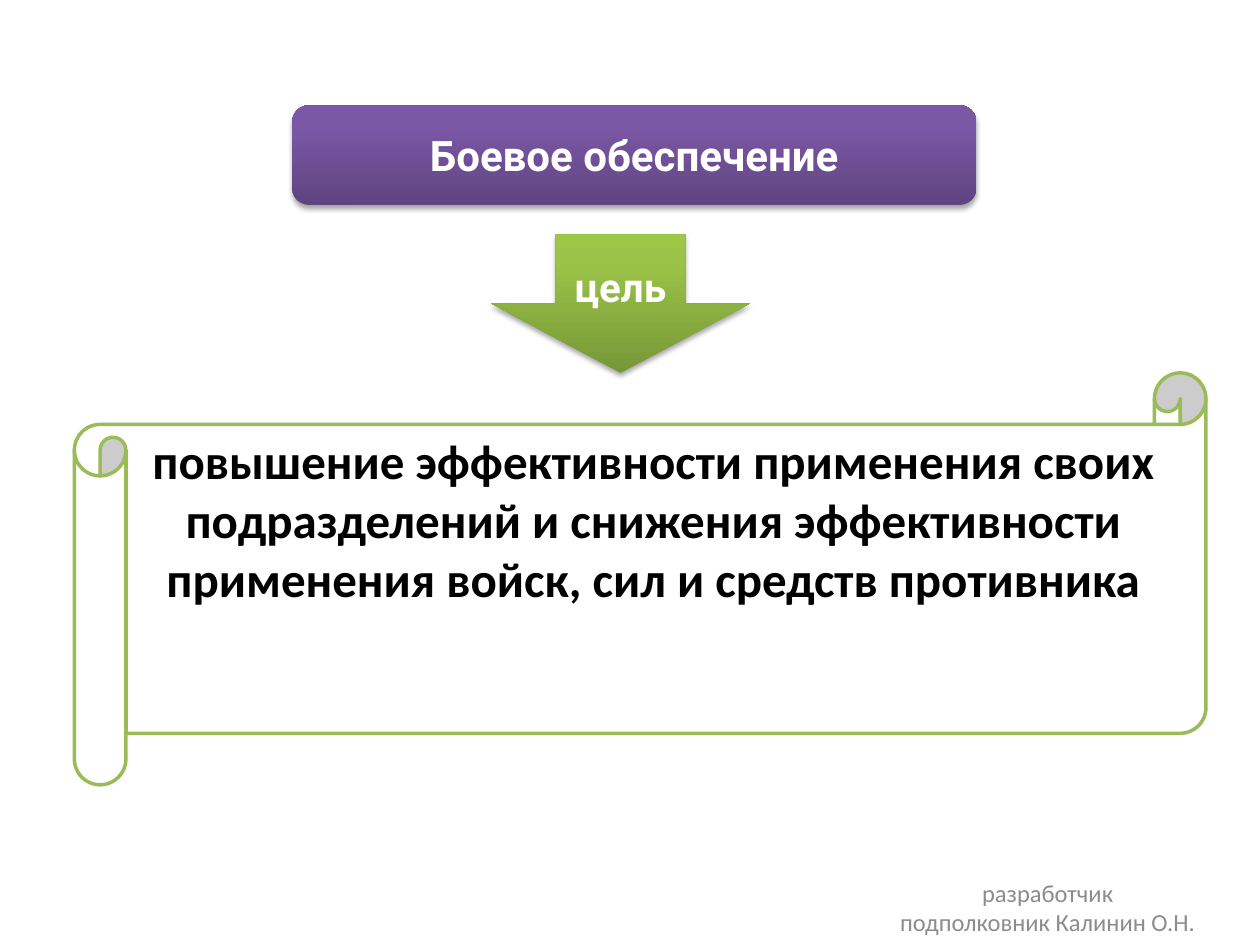
from lxml.etree import SubElement
from pptx import Presentation
from pptx.dml.color import RGBColor
from pptx.enum.shapes import MSO_SHAPE
from pptx.enum.text import MSO_ANCHOR, MSO_AUTO_SIZE, PP_ALIGN
from pptx.oxml.ns import qn
from pptx.util import Pt

HEAD = "Боевое обеспечение"
LINK = "цель"
GOAL = ("повышение эффективности применения своих подразделений и снижения "
        "эффективности применения войск, сил и средств противника")
AUTHOR = ["разработчик", "подполковник Калинин О.Н."]

PURPLE = [(0, "5F4480"), (80, "7B58A6"), (100, "7C57A8")]
GREEN = [(0, "779737"), (80, "9BC348"), (100, "9DC746")]


def color(code):
    return RGBColor.from_string(code)


def add(node, tag, **attrs):
    return SubElement(node, qn(tag), {k: str(v) for k, v in attrs.items()})


def write(shape, lines, size, font, code, bold=False, anchor=MSO_ANCHOR.MIDDLE):
    frame = shape.text_frame
    frame.word_wrap = True
    frame.vertical_anchor = anchor
    for i, line in enumerate(lines):
        para = frame.add_paragraph() if i else frame.paragraphs[0]
        para.alignment = PP_ALIGN.CENTER
        run = para.add_run()
        run.text = line
        run.font.size = Pt(size)
        run.font.name = font
        run.font.bold = bold
        run.font.color.rgb = color(code)


def put(slide, kind, box):
    shape = slide.shapes.add_shape(kind, *map(Pt, box))
    shape.shadow.inherit = False
    return shape


def shade(shape, stops):
    """Fill from bottom to top with the stops and cast a soft shadow down."""
    shape.line.fill.background()
    shape.fill.gradient()
    shape.fill.gradient_angle = 90
    props = shape.element.spPr
    group = props.find(".//" + qn("a:gsLst"))
    for old in list(group):
        group.remove(old)
    for pos, code in stops:
        stop = add(group, "a:gs", pos=pos * 1000)
        add(stop, "a:srgbClr", val=code)
    drop = add(props.find(qn("a:effectLst")), "a:outerShdw", blurRad=Pt(3.1),
               dist=Pt(1.8), dir=5400000, rotWithShape=0)
    add(add(drop, "a:srgbClr", val="000000"), "a:alpha", val=35000)


def main():
    deck = Presentation()
    deck.slide_width, deck.slide_height = Pt(720), Pt(540)
    slide = deck.slides.add_slide(deck.slide_layouts[6])

    note = slide.shapes.add_textbox(Pt(477.4), Pt(496.8), Pt(242.6), Pt(43.2))
    write(note, AUTHOR, 14, "Calibri", "8C8C8C")

    scroll = put(slide, MSO_SHAPE.HORIZONTAL_SCROLL, (42.5, 213.1, 646.6, 235.4))
    scroll.fill.solid()
    scroll.fill.fore_color.rgb = color("FFFFFF")
    scroll.line.color.rgb = color("9BBB59")
    scroll.line.width = Pt(2)
    write(scroll, [GOAL], 28, "Calibri", "000000", True, MSO_ANCHOR.TOP)
    scroll.text_frame.auto_size = MSO_AUTO_SIZE.SHAPE_TO_FIT_TEXT

    arrow = put(slide, MSO_SHAPE.DOWN_ARROW, (280.8, 133.9, 147.6, 79.2))
    shade(arrow, GREEN)
    write(arrow, [LINK], 23, "Roboto", "FFFFFF", True)

    head = put(slide, MSO_SHAPE.ROUNDED_RECTANGLE, (167, 60.2, 391, 56.9))
    shade(head, PURPLE)
    write(head, [HEAD], 24, "Roboto", "FFFFFF", True)

    deck.save("out.pptx")


if __name__ == "__main__":
    main()
